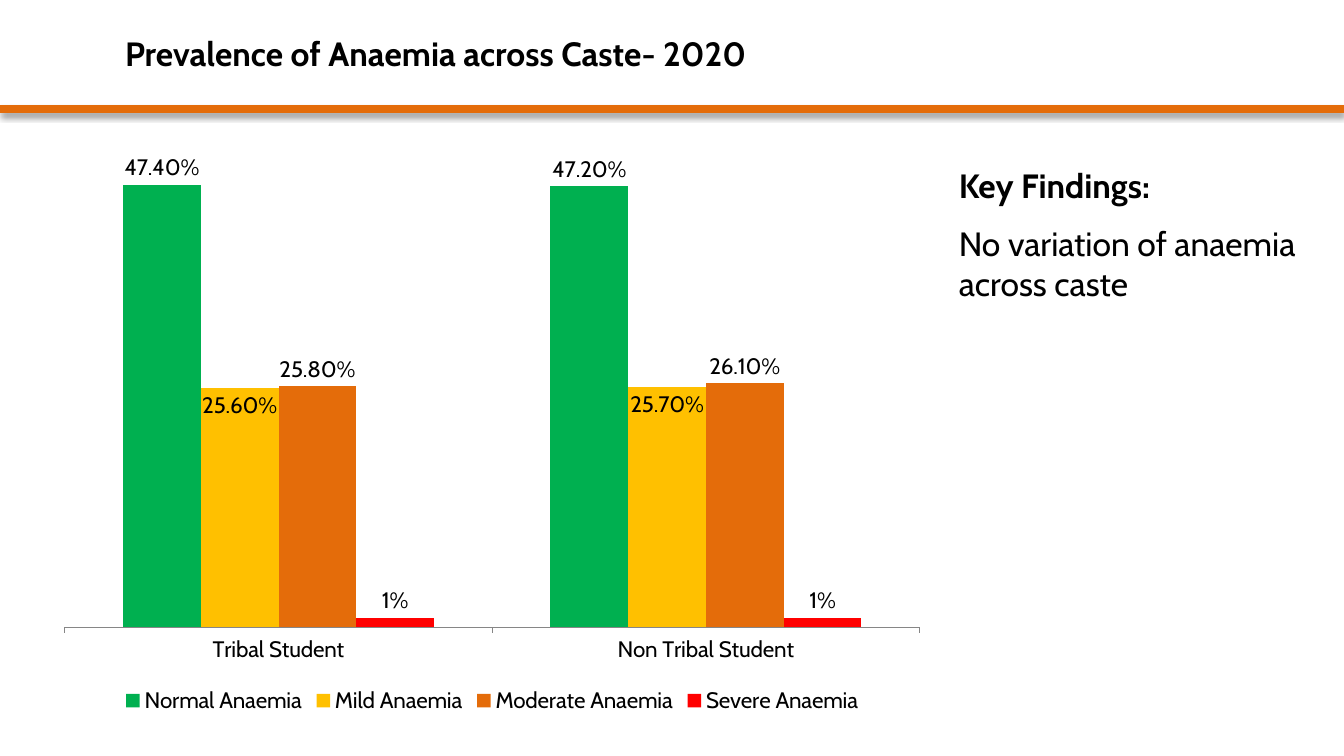
from lxml import etree
from pptx import Presentation
from pptx.chart.data import CategoryChartData
from pptx.dml.color import RGBColor
from pptx.enum.chart import XL_CHART_TYPE, XL_LABEL_POSITION, XL_LEGEND_POSITION, XL_TICK_LABEL_POSITION, XL_TICK_MARK
from pptx.enum.shapes import MSO_CONNECTOR
from pptx.enum.text import MSO_ANCHOR, PP_ALIGN
from pptx.oxml import parse_xml
from pptx.oxml.ns import nsdecls, qn
from pptx.util import Inches, Pt

COLUMNS = XL_CHART_TYPE.COLUMN_CLUSTERED
OUTSIDE_END = XL_LABEL_POSITION.OUTSIDE_END
INSIDE_END = XL_LABEL_POSITION.INSIDE_END
LEGEND_BOTTOM = XL_LEGEND_POSITION.BOTTOM
LABELS_LOW = XL_TICK_LABEL_POSITION.LOW
TICK_OUTSIDE = XL_TICK_MARK.OUTSIDE
STRAIGHT = MSO_CONNECTOR.STRAIGHT
MIDDLE = MSO_ANCHOR.MIDDLE
LEFT = PP_ALIGN.LEFT

ORANGE = "E46C0A"
CASTES = ["Tribal Student", "Non Tribal Student"]
SEVERITIES = [
    ("Normal Anaemia", (0.474, 0.472), "00B050", "0.00%", OUTSIDE_END),
    ("Mild Anaemia", (0.256, 0.257), "FFC000", "0.00%", INSIDE_END),
    ("Moderate Anaemia", (0.258, 0.261), ORANGE, "0.00%", OUTSIDE_END),
    ("Severe Anaemia", (0.01, 0.01), "FF0000", "0%", OUTSIDE_END),
]


def color(value):
    """Turn a hex string into a colour."""
    return RGBColor.from_string(value)


class SlideBuilder:
    """Hold the style and the current slide; places are percent of its size."""

    font, ink, axis_gray = "Cabin", "000000", "868686"
    heading_size, chart_size = 24, 16

    def __init__(self, deck):
        """Add a slide that has a title only."""
        self.deck = deck
        self.page = deck.slides.add_slide(deck.slide_layouts[5])

    def place(self, left, top, width, height):
        """Turn percent shares into lengths."""
        across, down = self.deck.slide_width / 100, self.deck.slide_height / 100
        return int(left * across), int(top * down), int(width * across), int(height * down)

    def style(self, font, size, bold=False):
        """Apply the slide's lettering to a font."""
        font.name, font.size, font.bold = self.font, Pt(size), bold
        font.color.rgb = color(self.ink)

    def add_text(self, para, text, bold):
        """Add one styled run to a paragraph."""
        para.alignment = LEFT
        span = para.add_run()
        span.text = text
        self.style(span.font, self.heading_size, bold)

    def title(self, text, *area):
        """Move and fill the title placeholder."""
        box = self.page.shapes.title
        box.left, box.top, box.width, box.height = self.place(*area)
        box.text_frame.vertical_anchor = MIDDLE
        self.add_text(box.text_frame.paragraphs[0], text, True)

    def rule(self, top):
        """Draw the shadowed rule across the slide."""
        left, height, width, _ = self.place(0, top, 100, 0)
        line = self.page.shapes.add_connector(STRAIGHT, left, height, width, height)
        line.line.color.rgb = color(ORANGE)
        line.line.width = Pt(6)
        line._element.spPr.append(parse_xml(
            f'<a:effectLst {nsdecls("a")}><a:outerShdw blurRad="{Pt(4)}" dist="{Pt(3)}" '
            'dir="5400000" rotWithShape="0"><a:srgbClr val="000000"><a:alpha val="40000"/>'
            '</a:srgbClr></a:outerShdw></a:effectLst>'))

    def findings(self, lines, *area):
        """Put paragraphs of (text, bold) in a text box."""
        frame = self.page.shapes.add_textbox(*self.place(*area)).text_frame
        frame.word_wrap = True
        for index, (text, bold) in enumerate(lines):
            para = frame.add_paragraph() if index else frame.paragraphs[0]
            para.space_before = Pt(6 if index else 0)
            para.space_after = Pt(6)
            self.add_text(para, text, bold)

    def chart(self, categories, rows, *area):
        """Draw the clustered columns with their labels."""
        data = CategoryChartData(number_format="0.00%")
        data.categories = categories
        for name, values, *_ in rows:
            data.add_series(name, values)
        chart = self.page.shapes.add_chart(COLUMNS, *self.place(*area), data).chart
        self.style(chart.font, self.chart_size)
        chart.has_title = False
        chart.has_legend = True
        chart.legend.position = LEGEND_BOTTOM
        chart.legend.include_in_layout = False
        axis = chart.category_axis
        axis.major_tick_mark = TICK_OUTSIDE
        axis.tick_label_position = LABELS_LOW
        axis.format.line.color.rgb = color(self.axis_gray)
        scale = chart.value_axis
        scale.visible = scale.has_major_gridlines = False
        scale.minimum_scale, scale.maximum_scale = 0, 0.5
        plot = chart.plots[0]
        plot.gap_width, plot.overlap, plot.vary_by_categories = 150, 0, False
        for series, (_, _, fill, number_format, position) in zip(plot.series, rows):
            series.format.fill.solid()
            series.format.fill.fore_color.rgb = color(fill)
            labels = series.data_labels
            labels.show_value = True
            labels.number_format, labels.number_format_is_linked = number_format, False
            labels.position = position
            self.style(labels.font, self.chart_size)
        self.fix_plot(chart, x=0.02, y=0.02, w=0.96, h=0.82)

    def fix_plot(self, chart, **shares):
        """Set the inner plot area as shares of the chart."""
        area = chart._chartSpace.chart.plotArea
        for old in area.findall(qn("c:layout")):
            area.remove(old)
        layout = etree.Element(qn("c:layout"))
        manual = etree.SubElement(layout, qn("c:manualLayout"))
        settings = {"layoutTarget": "inner", "xMode": "edge", "yMode": "edge", **shares}
        for name, value in settings.items():
            etree.SubElement(manual, qn(f"c:{name}"), val=str(value))
        area.insert(0, layout)


def main():
    """Build and save the deck."""
    deck = Presentation()
    deck.slide_width, deck.slide_height = Inches(13.33), Inches(7.5)
    slide = SlideBuilder(deck)
    slide.rule(14.4)
    slide.findings([("Key Findings:", True), ("No variation of anaemia across caste", False)],
                   70.6, 21.2, 26.85, 27.3)
    slide.title("Prevalence of Anaemia across Caste- 2020", 8.55, 1.5, 82.3, 11)
    slide.chart(CASTES, SEVERITIES, 3.5, 19.7, 66.25, 75.3)
    deck.save("out.pptx")


if __name__ == "__main__":
    main()
